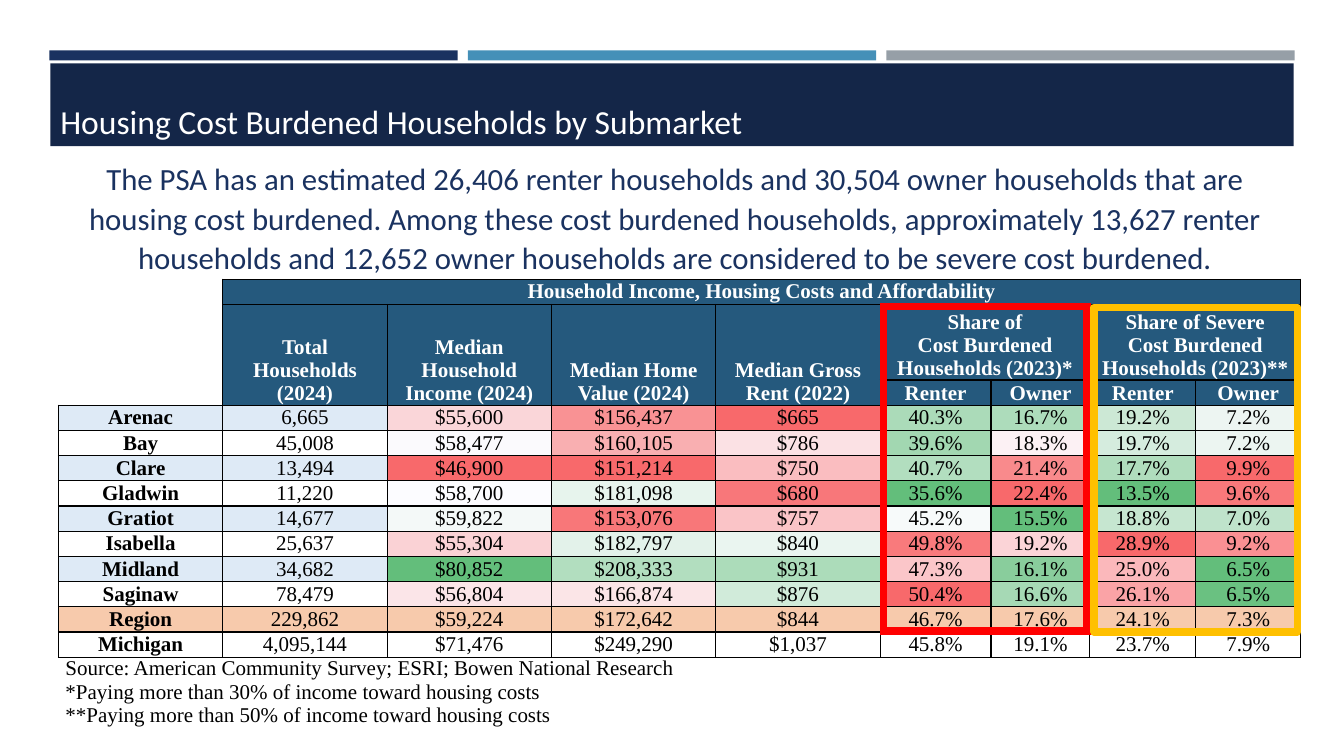
from lxml.etree import SubElement
from pptx import Presentation
from pptx.dml.color import RGBColor
from pptx.enum.shapes import MSO_SHAPE
from pptx.enum.text import MSO_ANCHOR, MSO_AUTO_SIZE, PP_ALIGN
from pptx.oxml.ns import qn
from pptx.util import Inches, Pt

NAVY = RGBColor(0x1A, 0x32, 0x60)
DARK_NAVY = RGBColor(0x14, 0x26, 0x48)
BLUE = RGBColor(0x45, 0x90, 0xB8)
GRAY = RGBColor(0x96, 0x9F, 0xA7)
HEADER_BLUE = RGBColor(0x25, 0x59, 0x7D)
PALE_BLUE = RGBColor(0xDE, 0xEA, 0xF6)
PEACH = RGBColor(0xF7, 0xCA, 0xAC)
WHITE = RGBColor(0xFF, 0xFF, 0xFF)
BLACK = RGBColor(0, 0, 0)
RED = RGBColor(0xFF, 0, 0)
GOLD = RGBColor(0xFF, 0xC0, 0)
NO_STYLE = "{2D5ABB26-0587-4C30-8999-92F81FD0307C}"

TITLE = "Housing Cost Burdened Households by Submarket"
SUMMARY = (
    "The PSA has an estimated 26,406 renter households and 30,504 owner households that are "
    "housing cost burdened. Among these cost burdened households, approximately 13,627 renter "
    "households and 12,652 owner households are considered to be severe cost burdened."
)
# (row, column, last row, last column, text)
HEADERS = [
    (0, 1, 0, 9, "Household Income, Housing Costs and Affordability"),
    (1, 1, 2, 1, "Total Households (2024)"),
    (1, 2, 2, 2, "Median Household Income (2024)"),
    (1, 3, 2, 3, "Median Home Value (2024)"),
    (1, 4, 2, 4, "Median Gross Rent (2022)"),
    (1, 5, 1, 6, "Share of\nCost Burdened\nHouseholds (2023)*"),
    (1, 7, 1, 9, "Share of Severe\nCost Burdened\nHouseholds (2023)**"),
    (2, 5, 2, 5, "Renter"),
    (2, 6, 2, 6, "Owner"),
    (2, 7, 2, 7, "Renter"),
    (2, 8, 2, 9, "Owner"),
]
# Values of each area, then the heat colours from the income column onwards
COUNTIES = [
    ("Arenac 6,665 $55,600 $156,437 $665 40.3% 16.7% 19.2% 7.2%",
     "FAD6D9 F99294 F8696B ABDBB9 ADDCBB CCE8D5 EDF5F2"),
    ("Bay 45,008 $58,477 $160,105 $786 39.6% 18.3% 19.7% 7.2%",
     "FBFAFD F9AFB1 FBE1E4 A2D7B1 FCF1F4 D5ECDE ECF5F1"),
    ("Clare 13,494 $46,900 $151,214 $750 40.7% 21.4% 17.7% 9.9%",
     "F8696B F8696B FABDC0 B2DEBF F98A8C B0DDBD F8696B"),
    ("Gladwin 11,220 $58,700 $181,098 $680 35.6% 22.4% 13.5% 9.6%",
     "FCFCFF E7F4ED F8777A 63BE7B F8696B 63BE7B F9787A"),
    ("Gratiot 14,677 $59,822 $153,076 $757 45.2% 15.5% 18.8% 7.0%",
     "F4F9F8 F87779 FAC4C7 F7FAFA 63BE7B C6E6D0 BFE3CB"),
    ("Isabella 25,637 $55,304 $182,797 $840 49.8% 19.2% 28.9% 9.2%",
     "FAD2D5 E3F2EA EAF5F0 F97A7C FBD4D7 F8696B FA9093"),
    ("Midland 34,682 $80,852 $208,333 $931 47.3% 16.1% 25.0% 6.5%",
     "63BE7B B2DEBF ACDCBA FBC6C9 89CD9C FBB8BB 63BE7B"),
    ("Saginaw 78,479 $56,804 $166,874 $876 50.4% 16.6% 26.1% 6.5%",
     "FBE5E8 FBE5E7 D1EBDA F8696B A6D9B5 FAA3A6 6AC181"),
]
TOTALS = [
    ("Region 229,862 $59,224 $172,642 $844 46.7% 17.6% 24.1% 7.3%", PEACH),
    ("Michigan 4,095,144 $71,476 $249,290 $1,037 45.8% 19.1% 23.7% 7.9%", WHITE),
]
FOOTNOTES = (
    "Source: American Community Survey; ESRI; Bowen National Research\n"
    "*Paying more than 30% of income toward housing costs\n"
    "**Paying more than 50% of income toward housing costs"
)
COLUMN_WIDTHS = [1.63] * 5 + [1.1, 0.98, 1.05, 0.33, 0.71]
ROW_HEIGHTS = [0.25, 0.75] + [0.25] * 11 + [0.75]
FOOTNOTE_ROW = len(ROW_HEIGHTS) - 1


def add_rectangle(slide, left, top, width, height, fill=None):
    shape = slide.shapes.add_shape(
        MSO_SHAPE.RECTANGLE, Inches(left), Inches(top), Inches(width), Inches(height))
    shape.shadow.inherit = False
    if fill is None:
        shape.fill.background()
    else:
        shape.fill.solid()
        shape.fill.fore_color.rgb = fill
        shape.line.fill.background()
    return shape


def add_borders(table_frame):
    """Black cell edges, leaving the corner and the footnotes open."""
    for row, row_element in enumerate(table_frame.element.iter(qn("a:tr"))):
        for column, cell_element in enumerate(row_element.iter(qn("a:tc"))):
            edges = ["a:lnL", "a:lnR", "a:lnT", "a:lnB"]
            if row == FOOTNOTE_ROW:
                edges = ["a:lnT"]
            elif row < 3 and column == 0:
                edges = ["a:lnR", "a:lnB"]
            properties = cell_element.get_or_add_tcPr()
            for edge in edges:
                line = SubElement(properties, qn(edge), w=str(Pt(1)))
                fill = SubElement(line, qn("a:solidFill"))
                SubElement(fill, qn("a:srgbClr"), val=str(BLACK))


def shrink_empty_cells(table_frame):
    """Keep cells without text from stretching their rows."""
    for cell_element in table_frame.element.iter(qn("a:tc")):
        if next(cell_element.iter(qn("a:t")), None) is None:
            properties = cell_element.get_or_add_tcPr()
            properties.set("marT", "0")
            properties.set("marB", "0")
            for paragraph in cell_element.iter(qn("a:p")):
                SubElement(paragraph, qn("a:endParaRPr"), sz="1000")


def write_cell(cell, text, fill=None, color=BLACK, bold=False,
               anchor=MSO_ANCHOR.MIDDLE, alignment=PP_ALIGN.CENTER):
    cell.margin_left = cell.margin_right = Inches(0.07)
    cell.margin_top = cell.margin_bottom = 0
    cell.vertical_anchor = anchor
    if fill is None:
        cell.fill.background()
    else:
        cell.fill.solid()
        cell.fill.fore_color.rgb = fill
    cell.text_frame.text = text
    for paragraph in cell.text_frame.paragraphs:
        paragraph.alignment = alignment
        paragraph.font.name = "Times New Roman"
        paragraph.font.size = Pt(15)
        paragraph.font.bold = bold
        paragraph.font.color.rgb = color


def add_housing_table(slide):
    frame = slide.shapes.add_table(
        len(ROW_HEIGHTS), len(COLUMN_WIDTHS), Inches(0.58), Inches(2.77),
        Inches(sum(COLUMN_WIDTHS)), Inches(sum(ROW_HEIGHTS)))
    table = frame.table
    table.first_row = table.horz_banding = False
    next(frame.element.iter(qn("a:tableStyleId"))).text = NO_STYLE
    for column, width in zip(table.columns, COLUMN_WIDTHS):
        column.width = Inches(width)
    for row, height in zip(table.rows, ROW_HEIGHTS):
        row.height = Inches(height)
    add_borders(frame)

    table.cell(0, 0).merge(table.cell(2, 0))
    for row, column, last_row, last_column, text in HEADERS:
        cell = table.cell(row, column)
        if (row, column) != (last_row, last_column):
            cell.merge(table.cell(last_row, last_column))
        anchor = MSO_ANCHOR.BOTTOM if row else MSO_ANCHOR.MIDDLE
        write_cell(cell, text, HEADER_BLUE, WHITE, True, anchor)

    areas = []
    for index, (values, heat) in enumerate(COUNTIES):
        band = None if index % 2 else PALE_BLUE
        areas.append((values, [band] * 2 + [RGBColor.from_string(code) for code in heat.split()]))
    areas += [(values, [fill] * 9) for values, fill in TOTALS]
    for row, (values, fills) in enumerate(areas, start=3):
        table.cell(row, 8).merge(table.cell(row, 9))
        for column, (value, fill) in enumerate(zip(values.split(), fills)):
            write_cell(table.cell(row, column), value, fill, bold=column == 0)

    footnotes = table.cell(FOOTNOTE_ROW, 0)
    footnotes.merge(table.cell(FOOTNOTE_ROW, 8))
    write_cell(footnotes, FOOTNOTES, anchor=MSO_ANCHOR.TOP, alignment=PP_ALIGN.LEFT)
    shrink_empty_cells(frame)


def add_title(slide):
    banner = add_rectangle(slide, 0.5, 0.63, 12.33, 0.82, DARK_NAVY)
    banner.text_frame.word_wrap = True
    banner.text_frame.vertical_anchor = MSO_ANCHOR.BOTTOM
    paragraph = banner.text_frame.paragraphs[0]
    paragraph.text = TITLE
    paragraph.alignment = PP_ALIGN.LEFT
    paragraph.line_spacing = 0.85
    paragraph.space_after = Pt(6)
    paragraph.font.name = "Calibri"
    paragraph.font.size = Pt(24)
    paragraph.font.color.rgb = WHITE


def add_summary(slide):
    box = slide.shapes.add_textbox(Inches(0.5), Inches(1.51), Inches(12.33), Inches(1.26))
    box.text_frame.word_wrap = True
    box.text_frame.auto_size = MSO_AUTO_SIZE.SHAPE_TO_FIT_TEXT
    paragraph = box.text_frame.paragraphs[0]
    paragraph.text = SUMMARY
    paragraph.alignment = PP_ALIGN.CENTER
    paragraph.line_spacing = 1.07
    paragraph.font.name = "Calibri"
    paragraph.font.size = Pt(22)
    paragraph.font.color.rgb = NAVY
    next(box.element.iter(qn("a:pPr"))).set("marL", str(Inches(0.06)))


def main():
    presentation = Presentation()
    presentation.slide_width, presentation.slide_height = Inches(13.33), Inches(7.5)
    slide = presentation.slides.add_slide(presentation.slide_layouts[6])
    for index, color in enumerate((NAVY, BLUE, GRAY)):
        add_rectangle(slide, 0.49 + 4.15 * index, 0.5, 4.05, 0.1, color)
    add_title(slide)
    add_housing_table(slide)
    add_summary(slide)
    for left, top, color, join in ((8.76, 3.04, RED, "a:miter"), (10.85, 3.05, GOLD, "a:round")):
        highlight = add_rectangle(slide, left, top, 2.02, 3.22)
        highlight.line.color.rgb = color
        highlight.line.width = Pt(5.25)
        SubElement(next(highlight.element.iter(qn("a:ln"))), qn(join))
    presentation.save("out.pptx")


if __name__ == "__main__":
    main()
